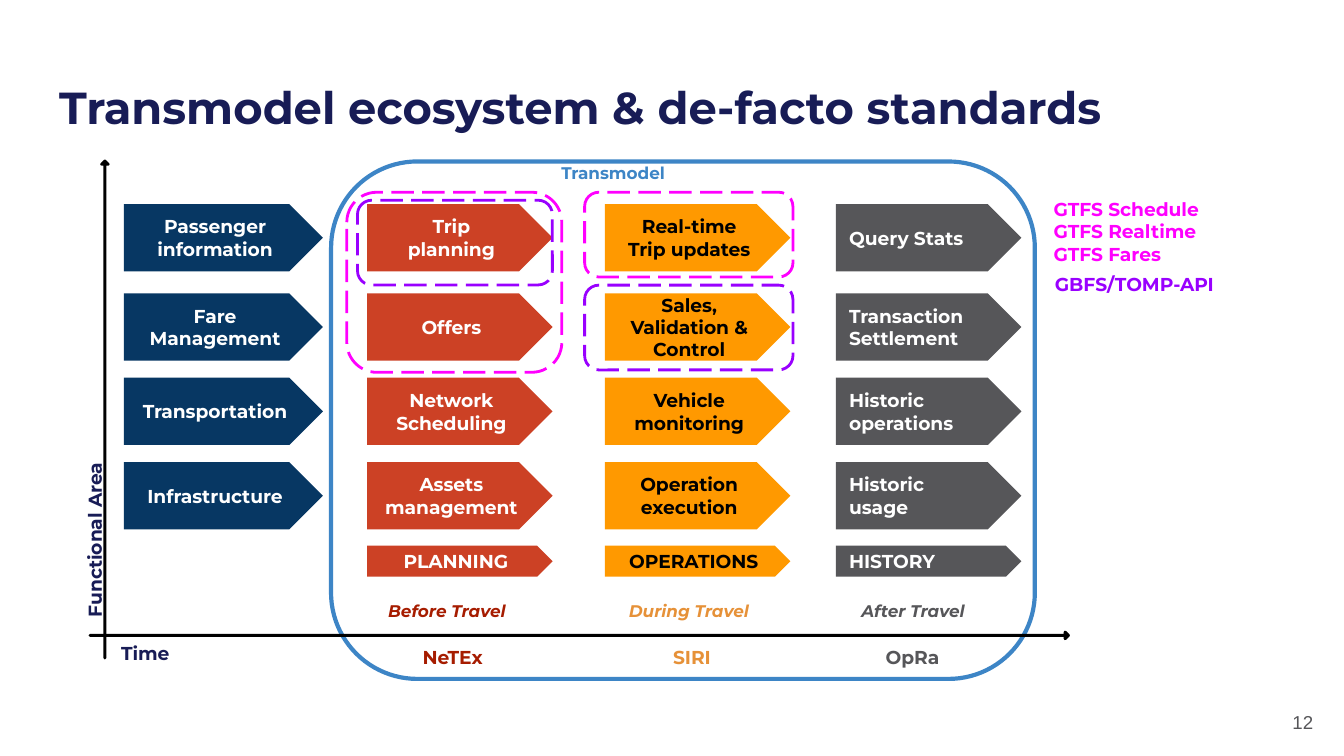
"""Build the slide on the Transmodel ecosystem and de-facto standards."""
from dataclasses import dataclass

import pptx
import pptx.dml.color
import pptx.enum.dml
import pptx.enum.shapes
import pptx.enum.text
import pptx.util

Pt = pptx.util.Pt
Shape = pptx.enum.shapes.MSO_SHAPE
Align = pptx.enum.text.PP_ALIGN
Anchor = pptx.enum.text.MSO_ANCHOR


@dataclass(frozen=True)
class Theme:
    font: str = "Montserrat"
    number_font: str = "Arial"
    title_size: float = 24
    body_size: float = 10
    small_size: float = 9
    inset: float = 7.2
    navy: str = "181C56"
    area: str = "073763"
    planning: str = "CC4125"
    planning_text: str = "A61C00"
    operations: str = "FF9900"
    operations_text: str = "E69138"
    history: str = "565659"
    transmodel: str = "3D85C6"
    gtfs: str = "FF00FF"
    gbfs: str = "9900FF"
    black: str = "000000"
    white: str = "FFFFFF"


def rgb(color):
    return pptx.dml.color.RGBColor.from_string(color)


class SlideBuilder:
    def __init__(self, slide, theme):
        self.slide = slide
        self.theme = theme

    def set_text(self, shape, text, color, size=None, align=Align.LEFT,
                 anchor=Anchor.TOP, font=None, bold=True, italic=False):
        frame = shape.text_frame
        frame.word_wrap = True
        frame.auto_size = pptx.enum.text.MSO_AUTO_SIZE.NONE
        frame.vertical_anchor = anchor
        frame.margin_left = frame.margin_right = Pt(self.theme.inset)
        frame.margin_top = frame.margin_bottom = Pt(self.theme.inset)
        frame.text = text
        for paragraph in frame.paragraphs:
            paragraph.alignment = align
            paragraph.font.name = font or self.theme.font
            paragraph.font.size = Pt(size or self.theme.body_size)
            paragraph.font.bold = bold
            paragraph.font.italic = italic
            paragraph.font.color.rgb = rgb(color)

    def shape(self, kind, box, fill=None, line=None, width=1.5):
        shape = self.slide.shapes.add_shape(kind, *map(Pt, box))
        shape.shadow.inherit = False
        if fill:
            shape.fill.solid()
            shape.fill.fore_color.rgb = rgb(fill)
        else:
            shape.fill.background()
        if line:
            shape.line.color.rgb = rgb(line)
            shape.line.width = Pt(width)
        else:
            shape.line.fill.background()
        return shape

    def title(self, text, box):
        shape = self.slide.shapes.title
        shape.left, shape.top, shape.width, shape.height = map(Pt, box)
        self.set_text(shape, text, self.theme.navy, self.theme.title_size)

    def label(self, text, box, color, rotation=0, **style):
        shape = self.slide.shapes.add_textbox(*map(Pt, box))
        shape.rotation = rotation
        self.set_text(shape, text, color, **style)

    def step(self, text, box, fill, color, align):
        shape = self.shape(Shape.PENTAGON, box, fill)
        self.set_text(shape, text, color, align=align, anchor=Anchor.MIDDLE)

    def frame(self, box, color, width=1.5, dashed=True):
        shape = self.shape(Shape.ROUNDED_RECTANGLE, box, line=color, width=width)
        if dashed:
            shape.line.dash_style = pptx.enum.dml.MSO_LINE.LONG_DASH

    def axis(self, box, rotation=0):
        shape = self.shape(Shape.RIGHT_ARROW, box, self.theme.navy, self.theme.black)
        shape.adjustments[0] = 0
        shape.rotation = rotation


def main():
    theme = Theme()
    presentation = pptx.Presentation()
    presentation.slide_width, presentation.slide_height = Pt(720), Pt(405)
    slide = presentation.slides.add_slide(presentation.slide_layouts[5])
    builder = SlideBuilder(slide, theme)

    builder.title("Transmodel ecosystem & de-facto standards", (24.5, 35.3, 671, 45.4))
    builder.label("12", (667.4, 367.2, 43.2, 38.7), theme.history, align=Align.RIGHT,
                  anchor=Anchor.MIDDLE, font=theme.number_font, bold=False)
    builder.frame((177.4, 86.5, 377, 277.2), theme.transmodel, 2.25, dashed=False)

    rows = [(109.4, 36), (157.2, 36), (202.4, 36), (247.6, 36), (292.4, 16.6)]
    columns = [
        (66.4, 106.6, theme.area, theme.white, Align.CENTER,
         ["Passenger information", "Fare\nManagement", "Transportation", "Infrastructure"]),
        (196.6, 99.4, theme.planning, theme.white, Align.CENTER,
         ["Trip\nplanning", "Offers", "Network\nScheduling", "Assets\nmanagement", "PLANNING"]),
        (324, 99.4, theme.operations, theme.black, Align.CENTER,
         ["Real-time\nTrip updates", "Sales,\nValidation &\nControl", "Vehicle\nmonitoring",
          "Operation\nexecution", "OPERATIONS"]),
        (447.8, 99.4, theme.history, theme.white, Align.LEFT,
         ["Query Stats", "Transaction\nSettlement", "Historic\noperations",
          "Historic\nusage", "HISTORY"]),
    ]
    for left, width, fill, color, align, texts in columns:
        for text, (top, height) in zip(texts, rows):
            builder.step(text, (left, top, width, height), fill, color, align)

    phases = [
        ("Before Travel", 200.9, "NeTEx", 219.4, 53.3, theme.planning_text),
        ("During Travel", 329.8, "SIRI", 353.5, 46, theme.operations_text),
        ("After Travel", 454.4, "OpRa", 467.4, 46, theme.history),
    ]
    for phase, phase_left, standard, standard_left, width, color in phases:
        builder.label(phase, (phase_left, 314.6, 80, 22.3), color,
                      size=theme.small_size, italic=True)
        builder.label(standard, (standard_left, 338.6, width, 23), color)

    builder.label("Transmodel", (293.6, 79.9, 117.4, 22.3), theme.transmodel,
                  size=theme.small_size)
    builder.axis((48.2, 338.6, 524.2, 3.6))
    builder.axis((-77, 217.6, 266.4, 3.6), rotation=270)
    builder.label("Functional Area", (-49.7, 225.4, 199.4, 25.2), theme.navy, rotation=270)
    builder.label("Time", (57.8, 336.4, 43.2, 25.2), theme.navy)

    for box, color in [
        ((185.8, 103, 115.2, 96.5), theme.gtfs),
        ((313.2, 103, 111.6, 45.4), theme.gtfs),
        ((313.2, 152.8, 111.6, 45.4), theme.gbfs),
        ((191.5, 107.3, 104.4, 45.4), theme.gbfs),
    ]:
        builder.frame(box, color)
    builder.label("GTFS Schedule\vGTFS Realtime\vGTFS Fares",
                  (557.3, 98.6, 111.6, 44.6), theme.gtfs)
    builder.label("GBFS/TOMP-API", (558, 139, 104.4, 23), theme.gbfs)
    presentation.save("out.pptx")


if __name__ == "__main__":
    main()
